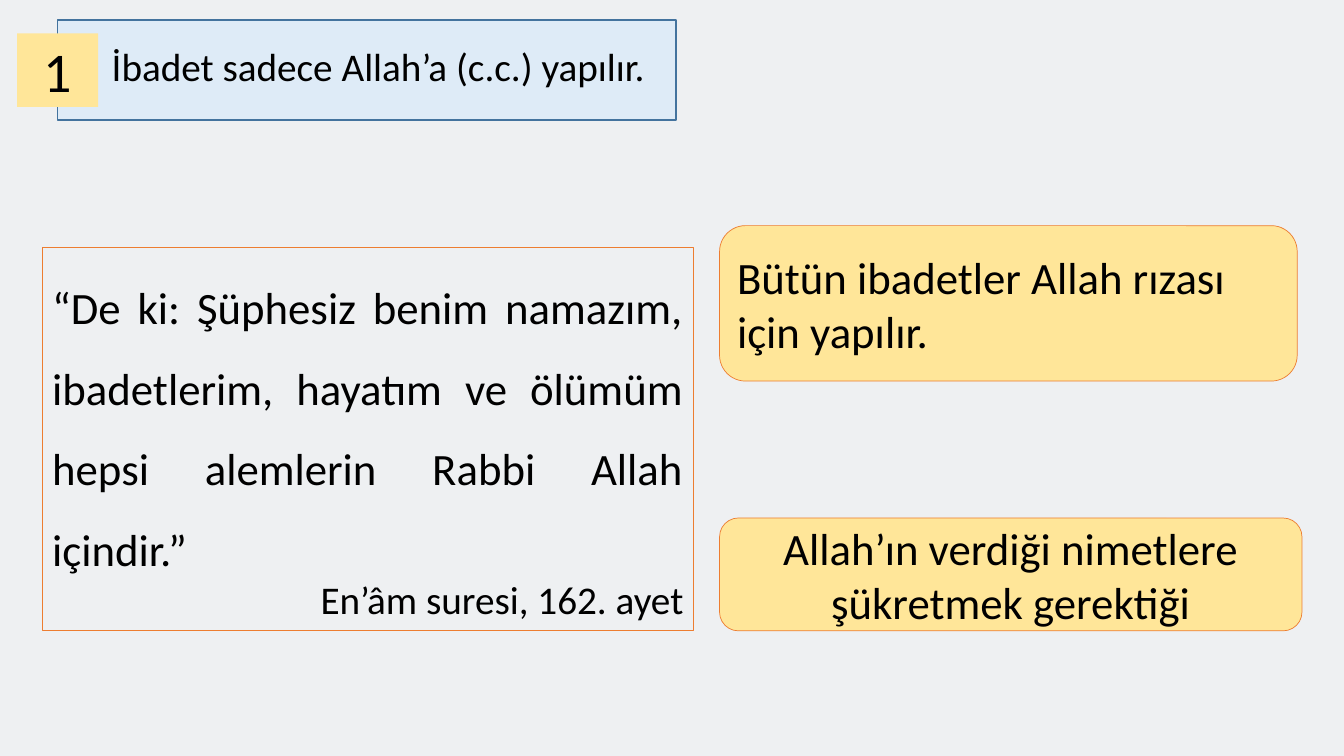
from pptx import Presentation
from pptx import util as u
from pptx.dml import color
from pptx.enum import shapes, text

COLORS = {"back": "EEF0F2", "banner": "DEEBF7", "banner_line": "43739E",
          "gold": "FFE699", "orange": "ED7D31", "ink": "000000"}
ALIGN = text.PP_ALIGN
SHAPE = shapes.MSO_SHAPE


class Painter:
    """Holds the style and the current slide, and draws its elements."""

    def __init__(self, page, font="Calibri"):
        self.page = page
        self.font = font

    def color(self, name):
        return color.RGBColor.from_string(COLORS[name])

    def background(self, name):
        fill = self.page.background.fill
        fill.solid()
        fill.fore_color.rgb = self.color(name)

    def shape(self, kind, place, fill=None, line=None, width=0.5):
        box = self.page.shapes.add_shape(kind, *map(u.Pt, place))
        box.shadow.inherit = False
        if fill:
            box.fill.solid()
            box.fill.fore_color.rgb = self.color(fill)
        else:
            box.fill.background()
        if line:
            box.line.color.rgb = self.color(line)
            box.line.width = u.Pt(width)
        else:
            box.line.fill.background()
        return box

    def label(self, place):
        return self.page.shapes.add_textbox(*map(u.Pt, place))

    def set_text(self, box, *lines, anchor=text.MSO_ANCHOR.MIDDLE, wrap=True):
        frame = box.text_frame
        frame.word_wrap = wrap
        frame.vertical_anchor = anchor
        frame.text = "\n".join(words for words, *_ in lines)
        for para, (_, size, align, spacing) in zip(frame.paragraphs, lines):
            para.alignment = align
            para.line_spacing = spacing
            for span in para.runs:
                span.font.name = self.font
                span.font.size = u.Pt(size)
                span.font.color.rgb = self.color("ink")

    def card(self, place, words, align):
        box = self.shape(SHAPE.ROUNDED_RECTANGLE, place, "gold", "orange")
        self.set_text(box, (words, 32, align, 1.0))


def main():
    deck = Presentation()
    deck.slide_width, deck.slide_height = u.Pt(960), u.Pt(540)
    painter = Painter(deck.slides.add_slide(deck.slide_layouts[6]))
    painter.background("back")

    painter.shape(SHAPE.RECTANGLE, (41, 14.4, 442, 71.4), "banner", "banner_line", 1)
    badge = painter.shape(SHAPE.RECTANGLE, (12.2, 23.8, 58, 52.6), "gold")
    painter.set_text(badge, ("1", 40, ALIGN.CENTER, 1.0))
    title = painter.label((72.7, 26.6, 405.4, 41))
    painter.set_text(title, ("İbadet sadece Allah’a (c.c.) yapılır.", 28, ALIGN.LEFT, 1.0),
                     anchor=text.MSO_ANCHOR.TOP, wrap=False)

    quote = painter.shape(SHAPE.RECTANGLE, (30.2, 177, 465, 273.6), line="orange", width=0.75)
    painter.set_text(
        quote,
        ("“De ki: Şüphesiz benim namazım, ibadetlerim, hayatım ve ölümüm "
         "hepsi alemlerin Rabbi Allah içindir.”", 32, ALIGN.JUSTIFY, 1.5),
        ("En’âm suresi, 162. ayet", 28, ALIGN.RIGHT, 1.0),
        anchor=text.MSO_ANCHOR.TOP)

    painter.card((514, 161.2, 412.6, 111), "Bütün ibadetler Allah rızası için yapılır.", ALIGN.LEFT)
    painter.card((514, 370, 416, 80.6), "Allah’ın verdiği nimetlere şükretmek gerektiği", ALIGN.CENTER)
    deck.save("out.pptx")


if __name__ == "__main__":
    main()
